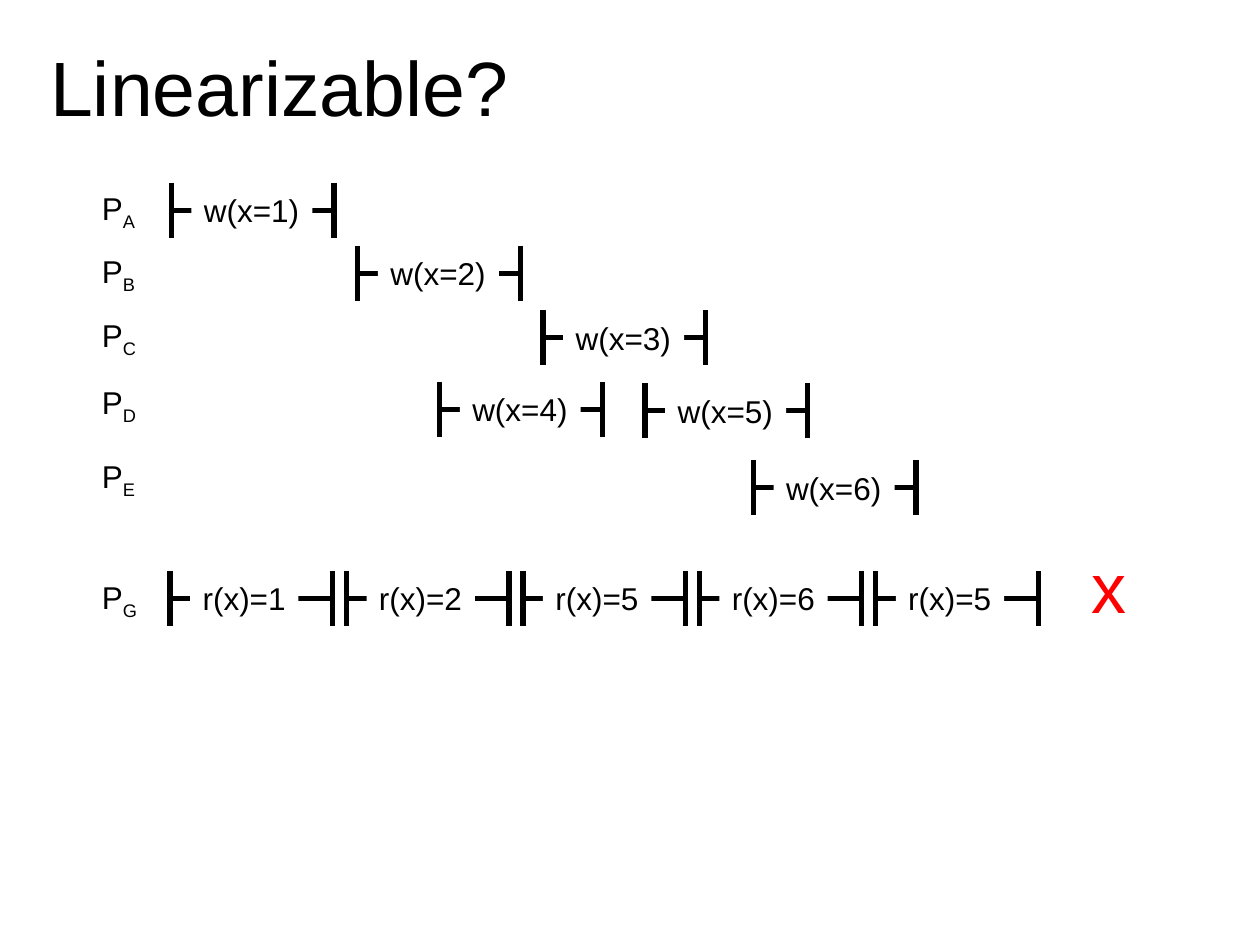
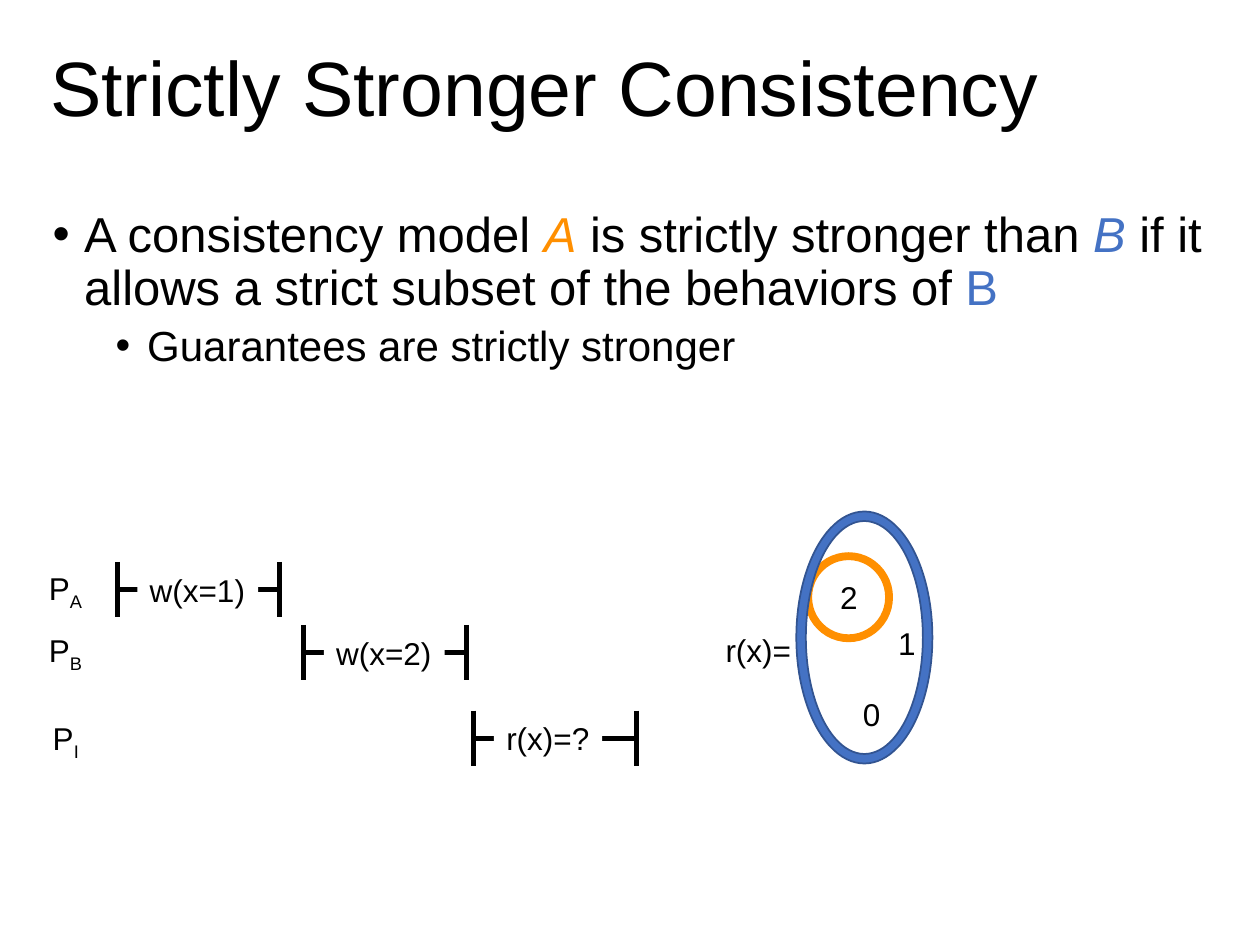
from dataclasses import dataclass
from typing import Optional

from lxml import etree
from pptx import Presentation
from pptx import util as u
from pptx.dml.color import RGBColor
from pptx.enum import shapes, text
from pptx.oxml import ns

PX = u.Inches(1) // 100  # 100 px to the inch


# Theme
@dataclass(frozen=True)
class Theme:
    font: str = "Arial"
    ink: str = "000000"
    paper: str = "FFFFFF"
    wrong: str = "FF0000"
    stronger: str = "FF8F00"
    weaker: str = "4472C4"
    weaker_edge: str = "325491"
    title_size: int = 44
    verdict_size: int = 40
    body_size: int = 28
    sub_body_size: int = 24
    label_size: int = 18
    bar_width: int = 3
    tight: float = 0.9


THEME = Theme()


# Repeated elements
@dataclass(frozen=True)
class Box:
    left: int
    top: int
    width: int
    height: int

    def emu(self) -> tuple:
        return tuple(v * PX for v in (self.left, self.top, self.width, self.height))


@dataclass(frozen=True)
class Process:
    name: str
    left: int
    top: int


@dataclass(frozen=True)
class Operation:
    label: str
    left: int
    middle: int


@dataclass(frozen=True)
class Ring:
    box: Box
    fill: str
    edge: str


OPERATION_WIDTH = 129
CAP_HALF = 22
LABEL_INDENT = 16
LABEL_HEIGHT = 40
LABEL_WIDTHS = {"w": 96, "r": 86}  # writes and reads
TITLE_BOX = Box(30, 0, 940, 145)


# Text
def write(paragraph, words: str, *, size: int = THEME.label_size, color: str = THEME.ink,
          italic: bool = False, subscript: bool = False) -> None:
    run = paragraph.add_run()
    run.text = words
    run.font.name = THEME.font
    run.font.size = u.Pt(size)
    run.font.italic = italic
    run.font.color.rgb = RGBColor.from_string(color)
    if subscript:
        run.font._element.set("baseline", "-25000")


def add_text_box(parent, box: Box, *, fill: Optional[str] = None, wrap: bool = False,
                 anchor=text.MSO_ANCHOR.TOP):
    shape = parent.shapes.add_textbox(*box.emu())
    frame = shape.text_frame
    frame.word_wrap = wrap
    frame.vertical_anchor = anchor
    if not wrap:
        frame.auto_size = text.MSO_AUTO_SIZE.SHAPE_TO_FIT_TEXT
    if fill:
        shape.fill.solid()
        shape.fill.fore_color.rgb = RGBColor.from_string(fill)
    return frame


def add_label(parent, words: str, box: Box) -> None:
    write(add_text_box(parent, box, fill=THEME.paper).paragraphs[0], words)


def add_title(slide, words: str) -> None:
    frame = add_text_box(slide, TITLE_BOX, wrap=True, anchor=text.MSO_ANCHOR.MIDDLE)
    frame.paragraphs[0].line_spacing = THEME.tight
    write(frame.paragraphs[0], words, size=THEME.title_size)


def set_bullet(paragraph, *, level: int, indent: int, space_before: int) -> None:
    paragraph.level = level
    paragraph.line_spacing = THEME.tight
    paragraph.space_before = u.Pt(space_before)
    properties = paragraph._p.get_or_add_pPr()
    properties.set("marL", str(indent * PX))
    properties.set("indent", str(-25 * PX))
    etree.SubElement(properties, ns.qn("a:buFont")).set("typeface", THEME.font)
    etree.SubElement(properties, ns.qn("a:buChar")).set("char", "•")


# Timeline
def add_bar(parent, x1: int, y1: int, x2: int, y2: int) -> None:
    bar = parent.shapes.add_connector(
        shapes.MSO_CONNECTOR.STRAIGHT, x1 * PX, y1 * PX, x2 * PX, y2 * PX)
    bar.line.width = u.Pt(THEME.bar_width)
    bar.line.color.rgb = RGBColor.from_string(THEME.ink)
    etree.SubElement(bar._element.spPr, ns.qn("a:effectLst"))


def add_operation(slide, operation: Operation) -> None:
    group = slide.shapes.add_group_shape()
    left, middle = operation.left, operation.middle
    right = left + OPERATION_WIDTH
    add_bar(group, left, middle, right, middle)
    for x in (left, right):
        add_bar(group, x, middle - CAP_HALF, x, middle + CAP_HALF)
    add_label(group, operation.label,
              Box(left + LABEL_INDENT, middle - LABEL_HEIGHT // 2,
                  LABEL_WIDTHS[operation.label[0]], LABEL_HEIGHT))


def add_process(slide, process: Process) -> None:
    frame = add_text_box(slide, Box(process.left, process.top, 49, LABEL_HEIGHT))
    write(frame.paragraphs[0], "P")
    write(frame.paragraphs[0], process.name, subscript=True)


def add_timeline(slide, processes: list[Process], operations: list[Operation]) -> None:
    for process in processes:
        add_process(slide, process)
    for operation in operations:
        add_operation(slide, operation)


# Behaviour sets
def add_ring(parent, ring: Ring) -> None:
    shape = parent.shapes.add_shape(shapes.MSO_SHAPE.DONUT, *ring.box.emu())
    shape.shadow.inherit = False
    shape.adjustments[0] = 0.07
    shape.fill.solid()
    shape.fill.fore_color.rgb = RGBColor.from_string(ring.fill)
    shape.line.color.rgb = RGBColor.from_string(ring.edge)
    shape.line.width = u.Pt(1)


def add_verdict(slide, words: str, box: Box) -> None:
    shape = slide.shapes.add_shape(shapes.MSO_SHAPE.ROUNDED_RECTANGLE, *box.emu())
    shape.shadow.inherit = False
    shape.fill.background()
    shape.line.fill.background()
    frame = shape.text_frame
    frame.margin_left = frame.margin_right = 0
    frame.vertical_anchor = text.MSO_ANCHOR.MIDDLE
    paragraph = frame.paragraphs[0]
    paragraph.alignment = text.PP_ALIGN.CENTER
    paragraph.space_before = u.Pt(8)
    write(paragraph, words, size=THEME.verdict_size, color=THEME.wrong)


# Slides
def build_linearizable(slide) -> None:
    add_title(slide, "Linearizable?")
    process_tops = {"A": 145, "B": 195, "C": 246, "D": 299, "E": 358, "G": 454}
    writes = [(136, 167), (284, 217), (431, 268), (349, 325), (512, 326), (598, 387)]
    reads = [1, 2, 5, 6, 5]
    add_timeline(
        slide,
        [Process(name, 71, top) for name, top in process_tops.items()],
        [Operation(f"w(x={value})", *place) for value, place in enumerate(writes, 1)]
        + [Operation(f"r(x)={value}", 135 + 140 * i, 475) for i, value in enumerate(reads)],
    )
    add_verdict(slide, "x", Box(853, 435, 55, 60))


def build_stronger_consistency(slide) -> None:
    add_title(slide, "Strictly Stronger Consistency")

    # Definition
    frame = add_text_box(slide, Box(32, 162, 940, 513), wrap=True)
    definition = frame.paragraphs[0]
    set_bullet(definition, level=0, indent=25, space_before=10)
    for words, color, italic in (
        ("A consistency model ", THEME.ink, False),
        ("A", THEME.stronger, True),
        (" is strictly stronger than ", THEME.ink, False),
        ("B", THEME.weaker, True),
        (" if it allows a strict subset of the behaviors of ", THEME.ink, False),
        ("B", THEME.weaker, False),
    ):
        write(definition, words, size=THEME.body_size, color=color, italic=italic)
    guarantee = frame.add_paragraph()
    set_bullet(guarantee, level=1, indent=75, space_before=5)
    write(guarantee, "Guarantees are strictly stronger", size=THEME.sub_body_size)

    # Allowed results of the read
    group = slide.shapes.add_group_shape()
    add_label(group, "r(x)=", Box(566, 496, 72, LABEL_HEIGHT))
    for value, left, top in (("0", 675, 547), ("1", 703, 490), ("2", 657, 454)):
        add_label(group, value, Box(left, top, 34, LABEL_HEIGHT))
    add_ring(group, Ring(Box(639, 439, 69, 70), THEME.stronger, THEME.stronger))
    add_ring(group, Ring(Box(632, 406, 108, 200), THEME.weaker, THEME.weaker_edge))

    add_timeline(
        slide,
        [Process("A", 29, 447), Process("B", 29, 496), Process("I", 32, 566)],
        [Operation("w(x=1)", 93, 468), Operation("w(x=2)", 241, 518),
         Operation("r(x)=?", 376, 586)],
    )


def main() -> None:
    presentation = Presentation()
    presentation.slide_width = 1000 * PX
    presentation.slide_height = 750 * PX
    blank = presentation.slide_layouts[6]
    for build in (build_linearizable, build_stronger_consistency):
        build(presentation.slides.add_slide(blank))
    presentation.save("out.pptx")


if __name__ == "__main__":
    main()
